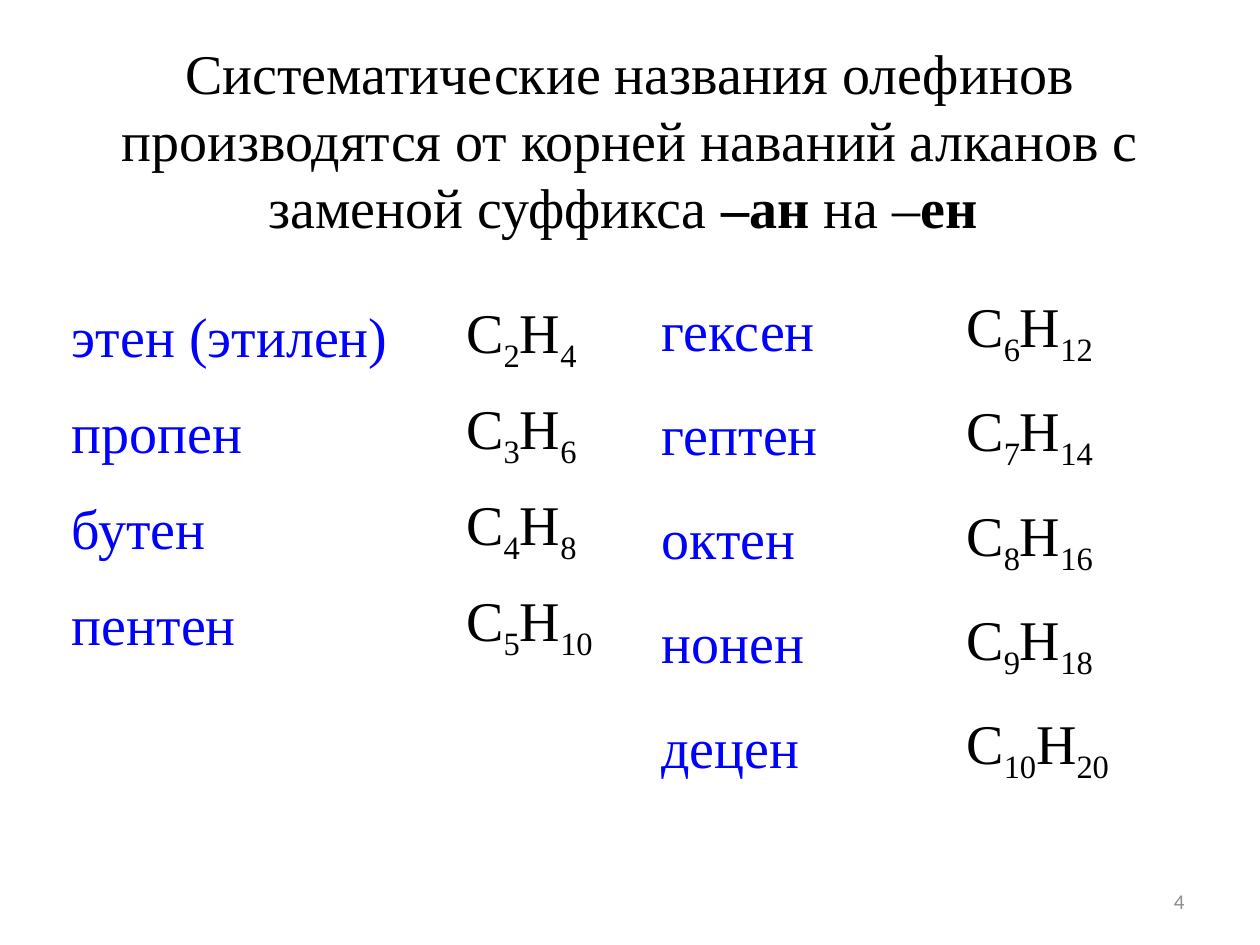
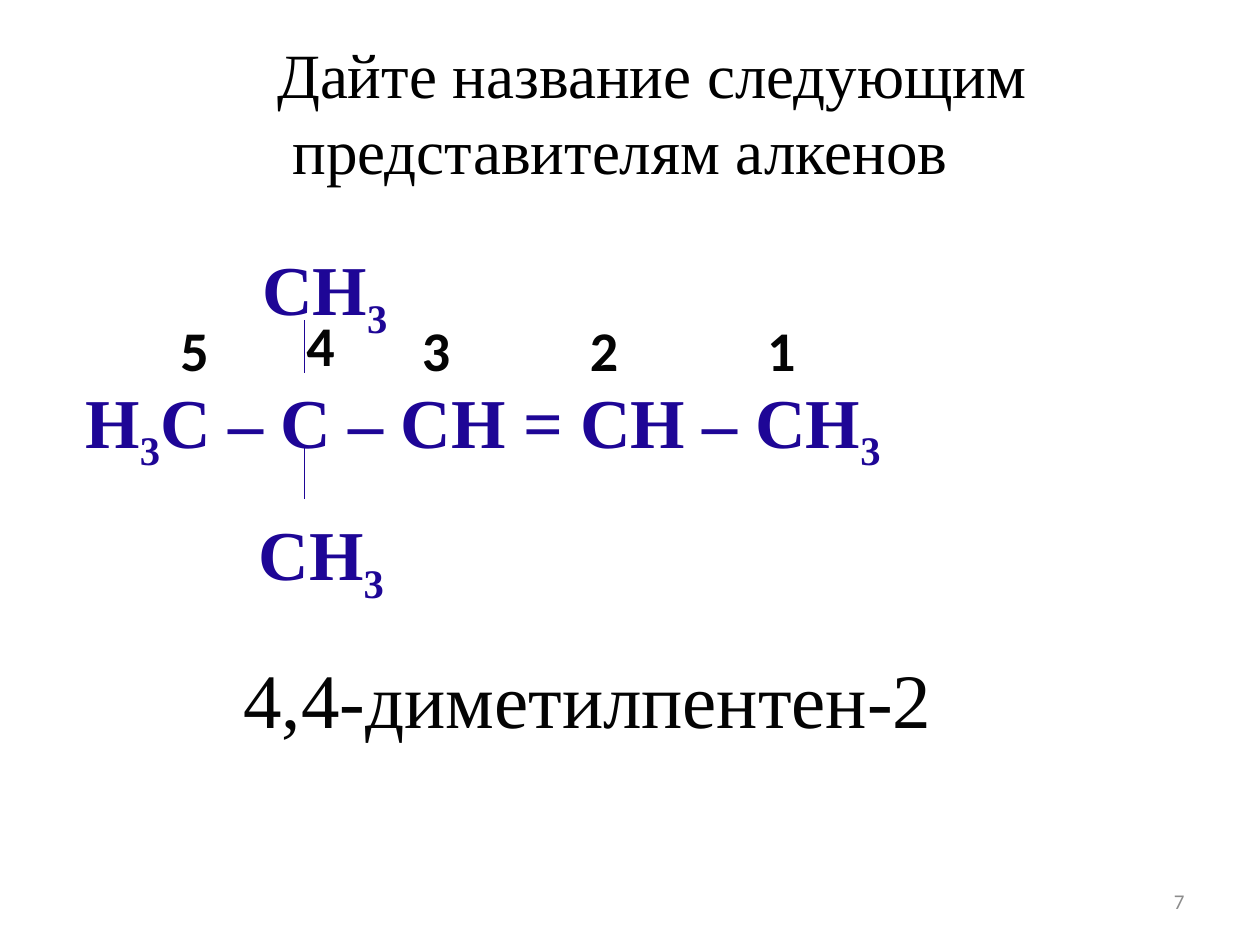
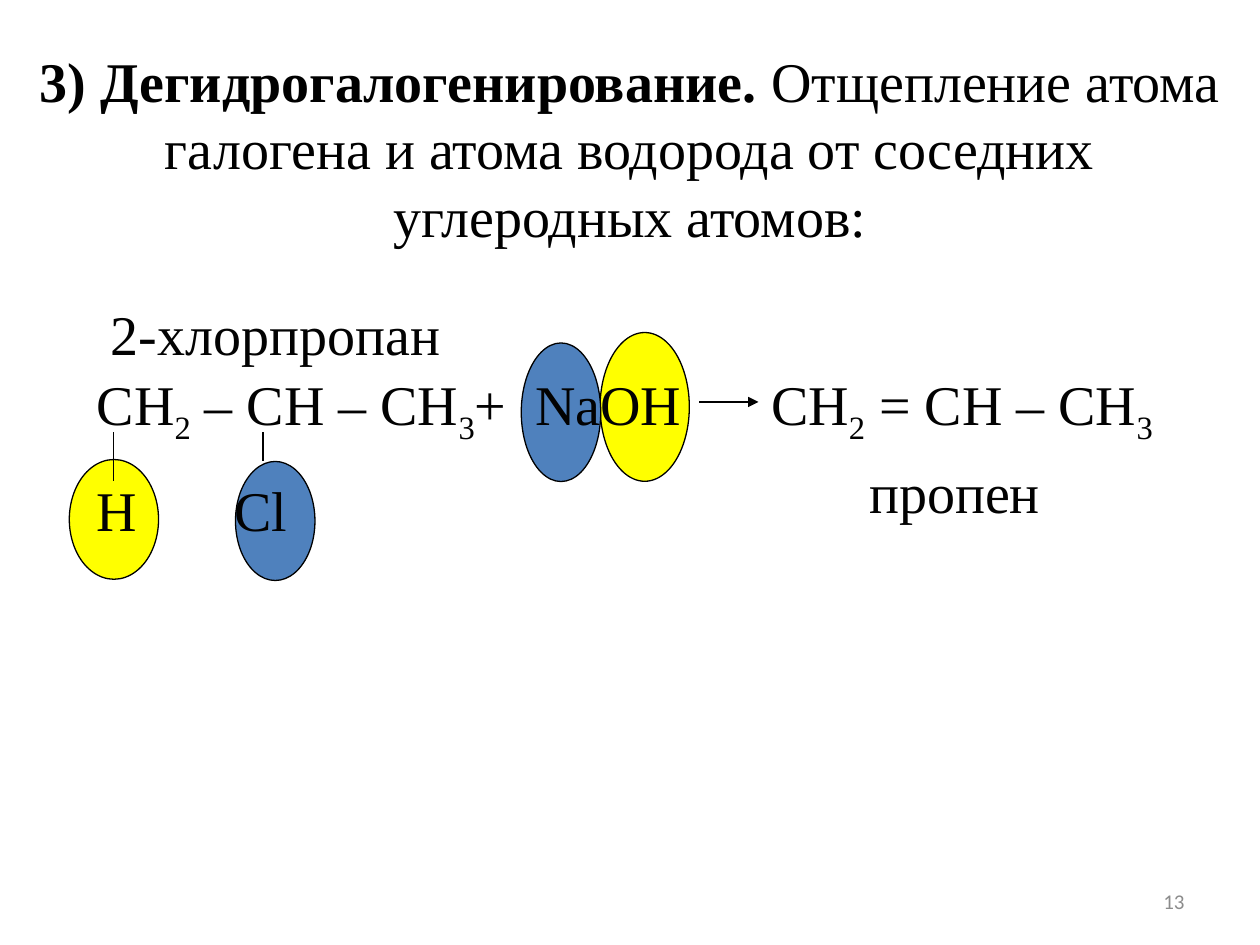
from dataclasses import dataclass
from itertools import groupby

from lxml import etree
from pptx import Presentation
from pptx.dml.color import RGBColor
from pptx.enum import shapes, text
from pptx.oxml import ns
from pptx.util import Pt

BLACK = RGBColor(0x00, 0x00, 0x00)
INK = RGBColor(0x02, 0x02, 0x02)
NUMBER_INK = RGBColor(0x04, 0x04, 0x04)
NAME_BLUE = RGBColor(0x00, 0x00, 0xFF)
FORMULA_BLUE = RGBColor(0x1E, 0x06, 0x96)
PAGE_GREY = RGBColor(0x8C, 0x8C, 0x8C)
YELLOW = RGBColor(0xFF, 0xFF, 0x00)
STEEL_BLUE = RGBColor(0x4F, 0x81, 0xBD)

SERIF, SANS = "Times New Roman", "Calibri"
TITLE_ONLY = 5
ALIGN, ANCHOR = text.PP_ALIGN, text.MSO_ANCHOR


@dataclass(frozen=True)
class Box:
    left: float
    top: float
    width: float
    height: float

    def lengths(self) -> list:
        return [Pt(v) for v in (self.left, self.top, self.width, self.height)]


@dataclass(frozen=True)
class Style:
    size: float
    color: RGBColor = BLACK
    font: str = SERIF
    bold: bool = False


@dataclass(frozen=True)
class Piece:
    text: str
    bold: bool = False
    subscript: bool = False


@dataclass(frozen=True)
class Line:
    pieces: list
    margin: float = 0
    indent: float = 0
    tabs: tuple = ()


@dataclass(frozen=True)
class Bond:
    x1: float
    y1: float
    x2: float
    y2: float
    color: RGBColor = BLACK
    arrow: bool = False


@dataclass(frozen=True)
class Highlight:
    box: Box
    color: RGBColor


@dataclass(frozen=True)
class Homologues:
    box: Box
    columns: tuple
    rows: tuple


BODY = Style(32, INK)
NAME = Style(32, NAME_BLUE)
FORMULA = Style(32)
TITLE = Style(32)
PAGE = Style(12, PAGE_GREY, SANS)
LOCANT = Style(32, NUMBER_INK, SANS, bold=True)
STRUCTURE = Style(40, FORMULA_BLUE, bold=True)


def plain(words: str) -> Line:
    return Line([Piece(words)])


def formula(symbols: str, margin: float = 0, tabs: tuple = ()) -> Line:
    """Chemical formula whose digits are set as subscripts."""
    pieces = [Piece("".join(part), subscript=digits) for digits, part in groupby(symbols, str.isdigit)]
    return Line(pieces, margin, tabs=tabs)


def write_line(paragraph, line: Line, style: Style) -> None:
    props = paragraph._p.get_or_add_pPr()
    if line.margin or line.indent:
        props.set("marL", str(Pt(line.margin)))
        props.set("indent", str(Pt(line.indent)))
    if line.tabs:
        stops = etree.SubElement(props, ns.qn("a:tabLst"))
        for stop in line.tabs:
            etree.SubElement(stops, ns.qn("a:tab"), pos=str(Pt(stop)), algn="l")
    for piece in line.pieces:
        run = paragraph.add_run()
        run.text = piece.text
        run.font.name = style.font
        run.font.size = Pt(style.size)
        run.font.bold = style.bold or piece.bold
        run.font.color.rgb = style.color
        if piece.subscript:
            run._r.get_or_add_rPr().set("baseline", "-25000")


def write_lines(frame, lines: list, style: Style, align=ALIGN.LEFT, anchor=ANCHOR.TOP) -> None:
    frame.word_wrap = True
    frame.auto_size = text.MSO_AUTO_SIZE.NONE
    frame.vertical_anchor = anchor
    for number, line in enumerate(lines):
        paragraph = frame.add_paragraph() if number else frame.paragraphs[0]
        paragraph.alignment = align
        if number:
            paragraph.space_before = Pt(round(style.size * 0.53))
        write_line(paragraph, line, style)


def add_text(slide, box: Box, lines: list, style: Style, align=ALIGN.LEFT, anchor=ANCHOR.TOP) -> None:
    frame = slide.shapes.add_textbox(*box.lengths()).text_frame
    write_lines(frame, lines, style, align, anchor)


def add_titled_slide(deck, box: Box, title: Line, page: int, style: Style = TITLE):
    slide = deck.slides.add_slide(deck.slide_layouts[TITLE_ONLY])
    heading = slide.shapes.title
    heading.left, heading.top, heading.width, heading.height = box.lengths()
    write_lines(heading.text_frame, [title], style, ALIGN.CENTER, ANCHOR.MIDDLE)
    add_text(slide, Box(516, 500.5, 168, 28.75), [plain(str(page))], PAGE, ALIGN.RIGHT, ANCHOR.MIDDLE)
    return slide


def add_bond(slide, bond: Bond) -> None:
    ends = [Pt(v) for v in (bond.x1, bond.y1, bond.x2, bond.y2)]
    connector = slide.shapes.add_connector(shapes.MSO_CONNECTOR.STRAIGHT, *ends)
    connector.line.color.rgb = bond.color
    connector.line.width = Pt(0.75)
    if bond.arrow:
        etree.SubElement(connector.line._get_or_add_ln(), ns.qn("a:tailEnd"), type="triangle")
    etree.SubElement(connector._element.spPr, ns.qn("a:effectLst"))


def add_highlight(slide, highlight: Highlight) -> None:
    oval = slide.shapes.add_shape(shapes.MSO_SHAPE.OVAL, *highlight.box.lengths())
    oval.shadow.inherit = False
    oval.fill.solid()
    oval.fill.fore_color.rgb = highlight.color
    oval.line.color.rgb = BLACK
    oval.line.width = Pt(0.75)


def add_homologues(slide, series: Homologues) -> None:
    table = slide.shapes.add_table(len(series.rows), 2, *series.box.lengths()).table
    table.first_row = table.horz_banding = False
    for column, width in zip(table.columns, series.columns):
        column.width = Pt(width)
    for row, (name, symbols) in zip(table.rows, series.rows):
        row.height = Pt(series.box.height / len(series.rows))
        entries = ((plain(name), NAME), (formula(symbols), FORMULA))
        for cell, (line, style) in zip(row.cells, entries):
            cell.fill.background()
            cell.vertical_anchor = ANCHOR.MIDDLE
            cell.margin_left = cell.margin_right = cell.margin_top = cell.margin_bottom = Pt(1.44)
            cell.text_frame.paragraphs[0].line_spacing = 1.15
            write_line(cell.text_frame.paragraphs[0], line, style)


def build_names(deck) -> None:
    title = Line([
        Piece("Систематические названия олефинов производятся от корней наваний алканов с заменой суффикса "),
        Piece("–ан ", bold=True),
        Piece("на –"),
        Piece("ен ", bold=True),
    ])
    slide = add_titled_slide(deck, Box(36, 21.6, 648, 116), title, 4)
    add_homologues(slide, Homologues(Box(39.6, 163.5, 343.5, 219.2), (225.4, 118.1), (
        ("этен (этилен)", "C2H4"),
        ("пропен", "C3H6"),
        ("бутен", "C4H8"),
        ("пентен", "C5H10"),
    )))
    add_homologues(slide, Homologues(Box(376.6, 157.7, 337.7, 297.5), (174.2, 163.5), (
        ("гексен", "C6H12"),
        ("гептен", "C7H14"),
        ("октен", "C8H16"),
        ("нонен", "C9H18"),
        ("децен", "C10H20"),
    )))


def build_exercise(deck) -> None:
    title = Line([Piece("Дайте название следующим представителям алкенов")], indent=36)
    slide = add_titled_slide(deck, Box(11.5, 16.5, 686, 94.5), title, 7, Style(36))
    add_text(slide, Box(41.75, 137, 653.75, 245), [
        formula("СН3", margin=101),
        formula("Н3С – С – СН = СН – СН3"),
        formula("СН3", margin=99),
    ], STRUCTURE)
    for start, end in ((213, 183), (255, 285)):
        add_bond(slide, Bond(174, start, 174, end, FORMULA_BLUE))
    locants = ((431.25, 177), (330, 177), (234, 177), (168, 174), (96, 177))
    for number, (left, top) in enumerate(locants, start=1):
        add_text(slide, Box(left, top, 30, 45.5), [plain(str(number))], LOCANT)
    add_text(slide, Box(132, 368.5, 504, 60), [plain("4,4-диметилпентен-2")], Style(44, NUMBER_INK))


def build_elimination(deck) -> None:
    title = Line([
        Piece("3) Дегидрогалогенирование.", bold=True),
        Piece(" Отщепление атома галогена и атома водорода от соседних углеродных атомов:"),
    ], margin=11.5)
    slide = add_titled_slide(deck, Box(0, 22.3, 708.5, 124), title, 13)
    for highlight in (
        Highlight(Box(39.6, 262.6, 51, 68.4), YELLOW),
        Highlight(Box(342.9, 190, 51, 85), YELLOW),
        Highlight(Box(134.6, 263.7, 45.4, 68), STEEL_BLUE),
        Highlight(Box(297.9, 196, 45.4, 79.2), STEEL_BLUE),
    ):
        add_highlight(slide, highlight)

    tabs = (78.5, 250.5)
    reagents = [formula("СН2 – СН – СН3+\tNaOH", tabs=tabs), formula("H\tCl", tabs=tabs)]
    add_text(slide, Box(48.2, 207.4, 646.6, 103), reagents, BODY)
    add_text(slide, Box(56.2, 167.8, 209.5, 45.4), [plain("2-хлорпропан")], BODY)
    add_text(slide, Box(433.5, 207.4, 238.3, 103), [formula("СН2 = СН – СН3")], BODY)
    add_text(slide, Box(489.6, 257.8, 147.6, 45.4), [plain("пропен")], BODY)
    for bond in (
        Bond(150.3, 247, 150.3, 263.5),
        Bond(65, 247, 65, 275),
        Bond(399.6, 229.7, 433.4, 229.7, arrow=True),
    ):
        add_bond(slide, bond)


def main() -> None:
    deck = Presentation()
    deck.slide_width, deck.slide_height = Pt(720), Pt(540)
    build_names(deck)
    build_exercise(deck)
    build_elimination(deck)
    deck.save("out.pptx")


if __name__ == "__main__":
    main()
